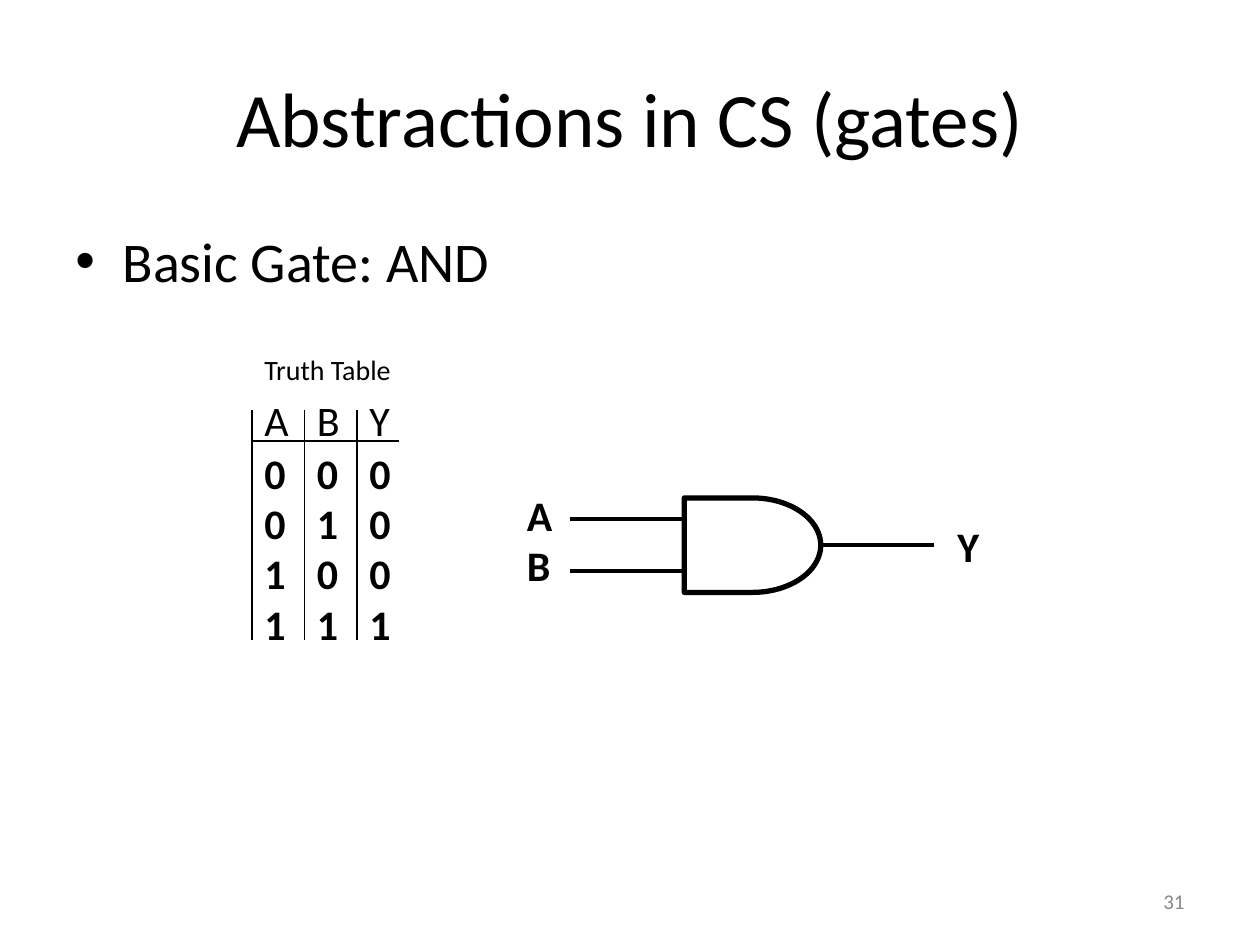
from dataclasses import dataclass

from pptx import Presentation
from pptx.dml.color import RGBColor as RGB
from pptx.enum.shapes import MSO_CONNECTOR as Conn, MSO_SHAPE as Kind
from pptx.enum.text import MSO_ANCHOR as Anchor, MSO_AUTO_SIZE as Fit, PP_ALIGN as Align
from pptx.oxml.ns import qn
from pptx.util import Pt
from lxml import etree


@dataclass(frozen=True)
class Theme:
    font: str = "Calibri"
    ink: RGB = RGB(0, 0, 0)
    gray: RGB = RGB(0x89, 0x89, 0x89)
    title: int = 44
    body: int = 32
    label: int = 24
    small: int = 16
    foot: int = 12
    thin: float = 0.75
    wire: float = 2.25
    edge: float = 3


T = Theme()
TRUTH = {"A": "0011", "B": "0101", "Y": "0001"}


def add_text(slide, box, lines, size, bold=False, color=T.ink,
             align=Align.LEFT, anchor=Anchor.TOP, wrap=False):
    shape = slide.shapes.add_textbox(*map(Pt, box))
    frame = shape.text_frame
    frame.word_wrap = wrap
    frame.auto_size = Fit.NONE if wrap else Fit.SHAPE_TO_FIT_TEXT
    frame.vertical_anchor = anchor
    for i, line in enumerate(lines):
        para = frame.add_paragraph() if i else frame.paragraphs[0]
        para.alignment = align
        run = para.add_run()
        run.text = line
        font = run.font
        font.name, font.size, font.bold = T.font, Pt(size), bold
        font.color.rgb = color
    return frame


def add_bullet(para, indent):
    props = para._p.get_or_add_pPr()
    props.set("marL", str(Pt(indent)))
    props.set("indent", str(-Pt(indent)))
    etree.SubElement(props, qn("a:buFont")).set("typeface", "Arial")
    etree.SubElement(props, qn("a:buChar")).set("char", "•")


def add_line(slide, x1, y1, x2, y2, width):
    line = slide.shapes.add_connector(Conn.STRAIGHT, Pt(x1), Pt(y1), Pt(x2), Pt(y2))
    line.line.color.rgb = T.ink
    line.line.width = Pt(width)
    etree.SubElement(line._element.spPr, qn("a:effectLst"))
    return line


def add_truth(slide, left, top):
    add_text(slide, (left, top - 36, 91, 27), ["Truth Table"], T.small)
    # One ruled column per signal
    for i, (name, bits) in enumerate(TRUTH.items()):
        x = left + 30 * i
        add_line(slide, x, top, x, top + 132, T.thin)
        add_text(slide, (x, top - 12, 31, 36), [name], T.label)
        add_text(slide, (x, top + 18, 27, 122), bits, T.label, bold=True)
    # Rule below the heads
    add_line(slide, left, top + 18, left + 84, top + 18, T.thin)


def add_gate(slide):
    gate = slide.shapes.add_shape(Kind.FLOWCHART_DELAY, Pt(391), Pt(284.5), Pt(78), Pt(54))
    gate.shadow.inherit = False
    gate.fill.background()
    gate.line.color.rgb = T.ink
    gate.line.width = Pt(T.edge)

    # Input and output wires
    for y in (296.5, 326.5):
        add_line(slide, 325.5, y, 391, y, T.wire)
    out = add_line(slide, 469, 311.5, 534, 311.5, T.wire)
    out.begin_connect(gate, 3)

    # Signal names
    add_text(slide, (294, 276, 32, 65), ["A", "B"], T.label, bold=True)
    add_text(slide, (540, 294, 32, 36), ["Y"], T.label, bold=True)


def main():
    deck = Presentation()
    deck.slide_width, deck.slide_height = Pt(720), Pt(540)
    slide = deck.slides.add_slide(deck.slide_layouts[6])

    # Title, bullet and page number
    add_text(slide, (36, 21.6, 648, 90), ["Abstractions in CS (gates)"], T.title,
             align=Align.CENTER, anchor=Anchor.MIDDLE, wrap=True)
    body = add_text(slide, (36, 126, 648, 356.4), ["Basic Gate: AND"], T.body, wrap=True)
    para = body.paragraphs[0]
    para.space_before = Pt(6.4)
    add_bullet(para, 27)
    add_text(slide, (516, 500.5, 168, 28.8), ["31"], T.foot, color=T.gray,
             align=Align.RIGHT, anchor=Anchor.MIDDLE, wrap=True)

    # Truth table and gate drawing
    add_truth(slide, 144, 234)
    add_gate(slide)
    deck.save("out.pptx")


if __name__ == "__main__":
    main()
